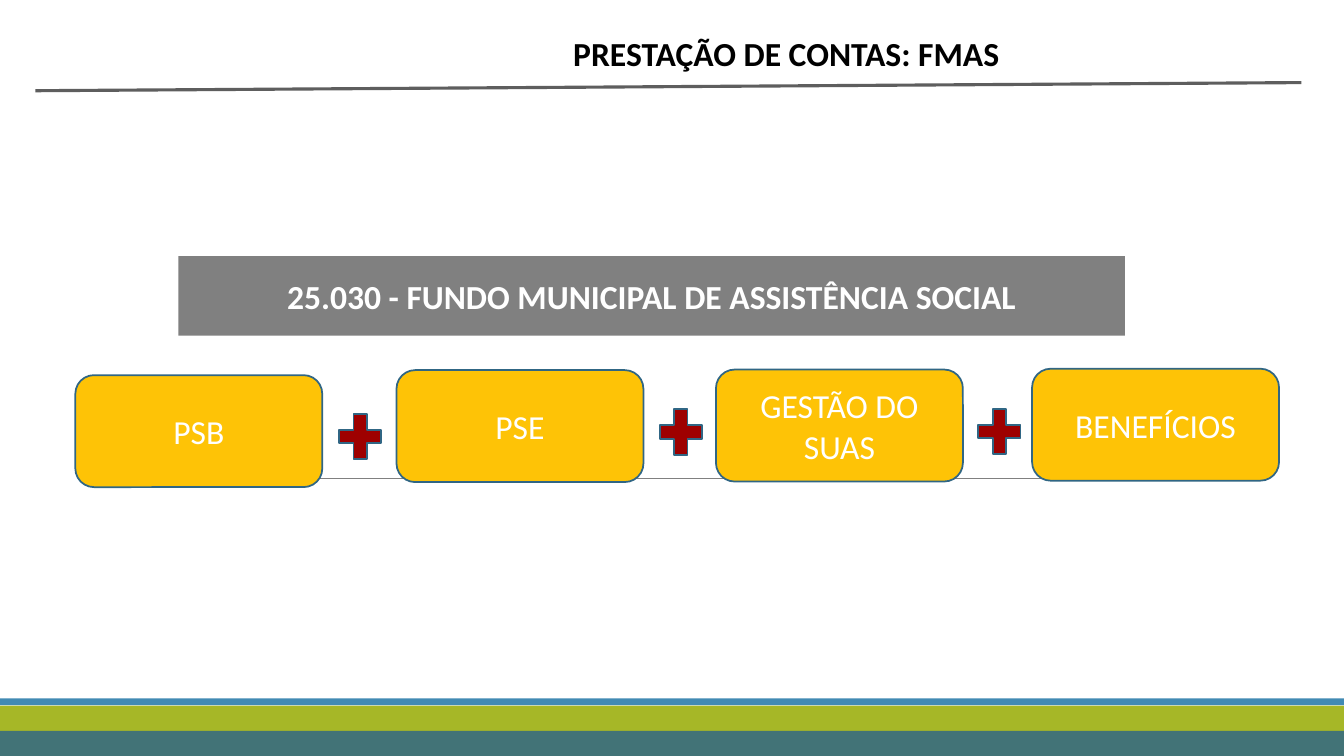
from lxml import etree
from pptx import Presentation
from pptx import util as u
from pptx.dml.color import RGBColor
from pptx.enum import shapes, text
from pptx.oxml.ns import qn

WHITE = RGBColor(0xFF, 0xFF, 0xFF)
BLACK = RGBColor(0x00, 0x00, 0x00)
GREEN = RGBColor(0xA6, 0xB7, 0x27)
BLUE = RGBColor(0x41, 0x8A, 0xB3)
TEAL = RGBColor(0x31, 0x68, 0x86)
OUTLINE = RGBColor(0x30, 0x66, 0x84)
YELLOW = RGBColor(0xFE, 0xC3, 0x06)
RED = RGBColor(0x9E, 0x00, 0x00)
GRAY = RGBColor(0x80, 0x80, 0x80)
DARK_GRAY = RGBColor(0x5E, 0x5E, 0x5E)

SHAPE = shapes.MSO_SHAPE
WIDTH, HEIGHT = 960, 540


class SlideBuilder:
    font = {"name": "Calibri", "size": u.Pt(24)}
    outline_width = 1.25

    def __init__(self, page):
        self.page = page

    def set_words(self, frame, words, color, bold):
        frame.word_wrap = True
        para = frame.paragraphs[0]
        para.alignment = text.PP_ALIGN.CENTER
        span = para.add_run()
        span.text = words
        for name, value in {**self.font, "bold": bold}.items():
            setattr(span.font, name, value)
        span.font.color.rgb = color

    def label(self, place, words, color, bold=False):
        box = self.page.shapes.add_textbox(*map(u.Pt, place))
        self.set_words(box.text_frame, words, color, bold)
        box.text_frame.auto_size = text.MSO_AUTO_SIZE.SHAPE_TO_FIT_TEXT

    def shape(self, kind, place, fill, outline=None, words=None, bold=False, opacity=None):
        box = self.page.shapes.add_shape(kind, *map(u.Pt, place))
        box.shadow.inherit = False
        box.fill.solid()
        box.fill.fore_color.rgb = fill
        if opacity:
            color = box._element.spPr.find(qn("a:solidFill"))[0]
            etree.SubElement(color, qn("a:alpha"), val=str(opacity * 1000))
        if outline:
            box.line.color.rgb = outline
            box.line.width = u.Pt(self.outline_width)
        else:
            box.line.fill.background()
        if words:
            box.text_frame.vertical_anchor = text.MSO_ANCHOR.MIDDLE
            self.set_words(box.text_frame, words, WHITE, bold)

    def line(self, ends, color, width):
        rule = self.page.shapes.add_connector(shapes.MSO_CONNECTOR.STRAIGHT, *map(u.Pt, ends))
        rule.line.color.rgb = color
        rule.line.width = u.Pt(width)
        etree.SubElement(rule._element.spPr, qn("a:effectLst"))


def main():
    deck = Presentation()
    deck.slide_width, deck.slide_height = u.Pt(WIDTH), u.Pt(HEIGHT)
    builder = SlideBuilder(deck.slides.add_slide(deck.slide_layouts[6]))

    # Footer bands and rules
    builder.shape(SHAPE.RECTANGLE, (0, 504, WIDTH, 36), GREEN)
    builder.shape(SHAPE.RECTANGLE, (0, 498.8, WIDTH, 5), BLUE)
    builder.line((95, 342, 872.6, 342), GRAY, 0.5)
    builder.line((25.2, 64.8, 929.5, 59), DARK_GRAY, 2.25)
    builder.shape(SHAPE.RECTANGLE, (0, 522, WIDTH, 18), TEAL, opacity=85)

    # Title and fund banner
    builder.label((279.4, 20.2, 564.5, 36), "PRESTAÇÃO DE CONTAS: FMAS", BLACK, bold=True)
    builder.shape(SHAPE.RECTANGLE, (127.4, 182.9, 676.1, 56.9), GRAY,
                  words="25.030 - FUNDO MUNICIPAL DE ASSISTÊNCIA SOCIAL", bold=True)

    # Parts of the fund
    for left, top, words in ((53.8, 268, "PSB"), (283.2, 264.4, "PSE"),
                             (511.4, 264, "GESTÃO DO SUAS"), (737.2, 263.4, "BENEFÍCIOS")):
        builder.shape(SHAPE.ROUNDED_RECTANGLE, (left, top, 176.4, 80), YELLOW, OUTLINE, words)

    # Plus signs between the parts
    for left, top in ((236.8, 289.8), (465.8, 286.6), (693.4, 286.2)):
        builder.shape(SHAPE.MATH_PLUS, (left, top, 41, 44), RED, OUTLINE)

    deck.save("out.pptx")


if __name__ == "__main__":
    main()
